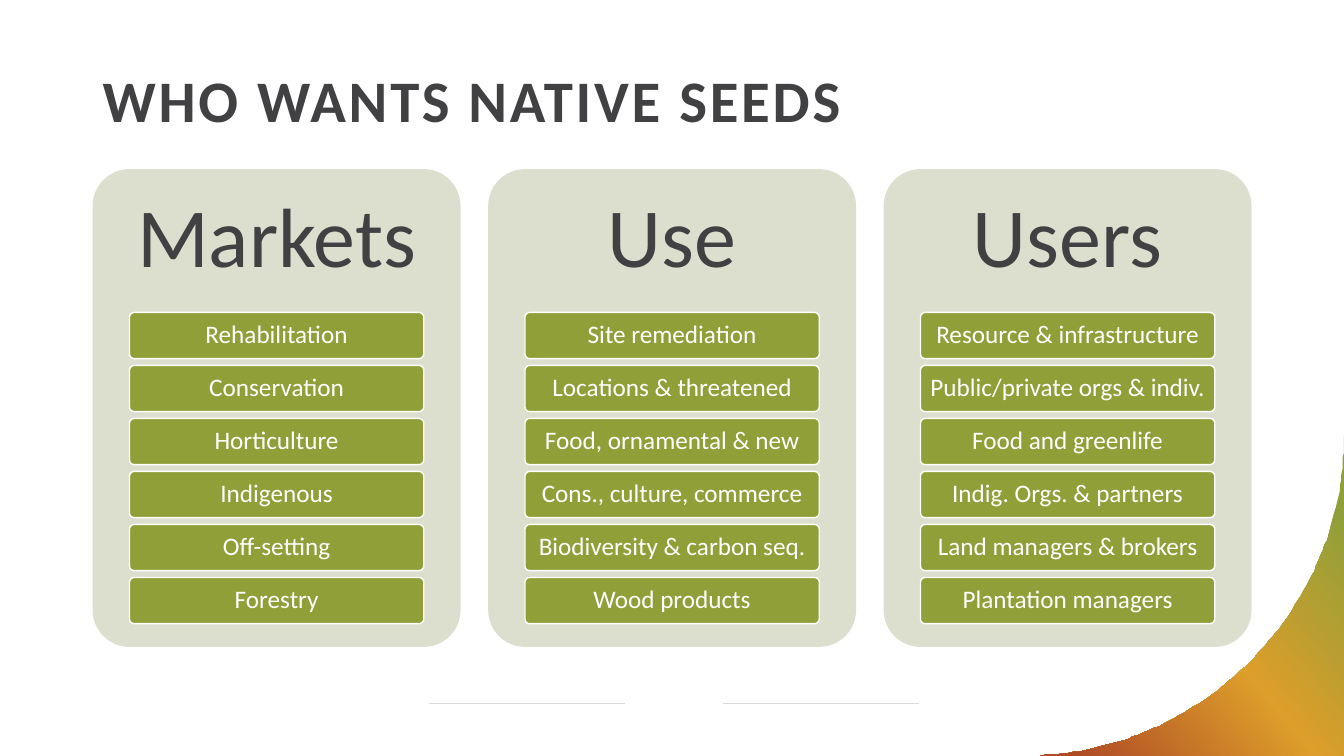
from math import cos, pi, sin

from lxml.etree import SubElement
from pptx import Presentation
from pptx.dml.color import RGBColor as RGB
from pptx.enum.shapes import MSO_CONNECTOR as CONN, MSO_SHAPE as SHAPE
from pptx.enum.text import MSO_ANCHOR as ANCHOR, PP_ALIGN as ALIGN
from pptx.oxml.ns import qn
from pptx.util import Pt

COLORS = {"text": "414042", "card": "DCDFCE", "green": "919F39", "amber": "DD9E2A",
          "rust": "AF4C26", "white": "FFFFFF", "rule": "D9D8DA"}
TITLE = {"size": Pt(42), "bold": True, "name": "Calibri"}
HEADING = {"size": Pt(60), "name": "Calibri"}
CHIP = {"size": Pt(18), "name": "Calibri"}
COLUMNS = {
    "Markets": ["Rehabilitation", "Conservation", "Horticulture", "Indigenous",
                "Off-setting", "Forestry"],
    "Use": ["Site remediation", "Locations & threatened", "Food, ornamental & new",
            "Cons., culture, commerce", "Biodiversity & carbon seq.", "Wood products"],
    "Users": ["Resource & infrastructure", "Public/private orgs & indiv.",
              "Food and greenlife", "Indig. Orgs. & partners",
              "Land managers & brokers", "Plantation managers"],
}


def rgb(name):
    """Return the named colour."""
    return RGB.from_string(COLORS[name])


def write(sp, text, fmt, color, inset, align=ALIGN.CENTER, anchor=ANCHOR.MIDDLE):
    """Fill a shape with one formatted line of text and return its run."""
    tf = sp.text_frame
    frame = {"word_wrap": True, "vertical_anchor": anchor,
             "margin_left": Pt(inset[0]), "margin_right": Pt(inset[0]),
             "margin_top": Pt(inset[1]), "margin_bottom": Pt(inset[1])}
    for key, value in frame.items():
        setattr(tf, key, value)
    p = tf.paragraphs[0]
    p.alignment, p.line_spacing = align, 0.9
    r = p.add_run()
    r.text = text
    for key, value in fmt.items():
        setattr(r.font, key, value)
    r.font.color.rgb = rgb(color)
    return r


def add_box(shapes, x, y, w, h, fill, line=None):
    """Add a rounded box with a plain fill and an optional outline."""
    sp = shapes.add_shape(SHAPE.ROUNDED_RECTANGLE, Pt(x), Pt(y), Pt(w), Pt(h))
    sp.adjustments[0] = 0.1
    sp.shadow.inherit = False
    sp.fill.solid()
    sp.fill.fore_color.rgb = rgb(fill)
    if line:
        sp.line.color.rgb = rgb(line)
        sp.line.width = Pt(1)
    else:
        sp.line.fill.background()
    return sp


def add_title(shapes, x, y, w, h, text):
    """Add the letterspaced slide title."""
    sp = shapes.add_textbox(Pt(x), Pt(y), Pt(w), Pt(h))
    r = write(sp, text, TITLE, "text", (7.2, 3.6), ALIGN.LEFT, ANCHOR.TOP)
    r.font._element.set("spc", "200")


def add_column(shapes, x, y, w, h, heading, items):
    """Add a card with a heading above a stack of chips."""
    add_box(shapes, x, y, w, h, "card")
    head = shapes.add_textbox(Pt(x), Pt(y), Pt(w), Pt(0.3 * h))
    write(head, heading, HEADING, "text", (18, 18))
    chip_h, pitch = 33, 37.86
    for i, item in enumerate(items):
        sp = add_box(shapes, x + 0.1 * w, y + 0.3 * h + i * pitch, 0.8 * w, chip_h,
                     "green", "white")
        write(sp, item, CHIP, "white", (4.5, 3.5))


def add_footer_rules(shapes, x, y, w, gap):
    """Add two thin rules on either side of a gap."""
    for left in (x, x + w + gap):
        ln = shapes.add_connector(CONN.STRAIGHT, Pt(left), Pt(y), Pt(left + w), Pt(y))
        ln.line.color.rgb = rgb("rule")
        ln.line.width = Pt(0.5)
        SubElement(ln._element.spPr, qn("a:effectLst"))


def add_corner(shapes, right, bottom, radius, steps=90):
    """Add the gradient corner outside a quarter circle."""
    cx, cy = right - radius, bottom - radius
    angles = [i * pi / 2 / steps for i in range(steps + 1)]
    arc = [(cx + radius * cos(a), cy + radius * sin(a)) for a in angles]
    fb = shapes.build_freeform(right, bottom, scale=Pt(1))
    fb.add_line_segments(arc, close=True)
    sp = fb.convert_to_shape()
    sp.shadow.inherit = False
    sp.line.fill.background()
    sp.fill.gradient()
    sp.fill.gradient_angle = 220
    stops = sp._element.spPr.find(".//" + qn("a:gsLst"))
    for old in list(stops):
        stops.remove(old)
    for pos, name in ((12, "green"), (50, "amber"), (91, "rust")):
        gs = SubElement(stops, qn("a:gs"), pos=str(pos * 1000))
        SubElement(gs, qn("a:srgbClr"), val=COLORS[name])


def main():
    """Build and save the slide."""
    prs = Presentation()
    prs.slide_width, prs.slide_height = Pt(960), Pt(540)
    shapes = prs.slides.add_slide(prs.slide_layouts[6]).shapes
    add_footer_rules(shapes, 306.2, 502.4, 140.2, 69.8)
    add_corner(shapes, 960, 540, 229)
    add_title(shapes, 66.2, 47.5, 828, 73.4, "WHO WANTS NATIVE SEEDS")
    for i, (heading, items) in enumerate(COLUMNS.items()):
        add_column(shapes, 66.2 + i * 282.5, 120.8, 262.8, 341.3, heading, items)
    prs.save("out.pptx")


if __name__ == "__main__":
    main()
